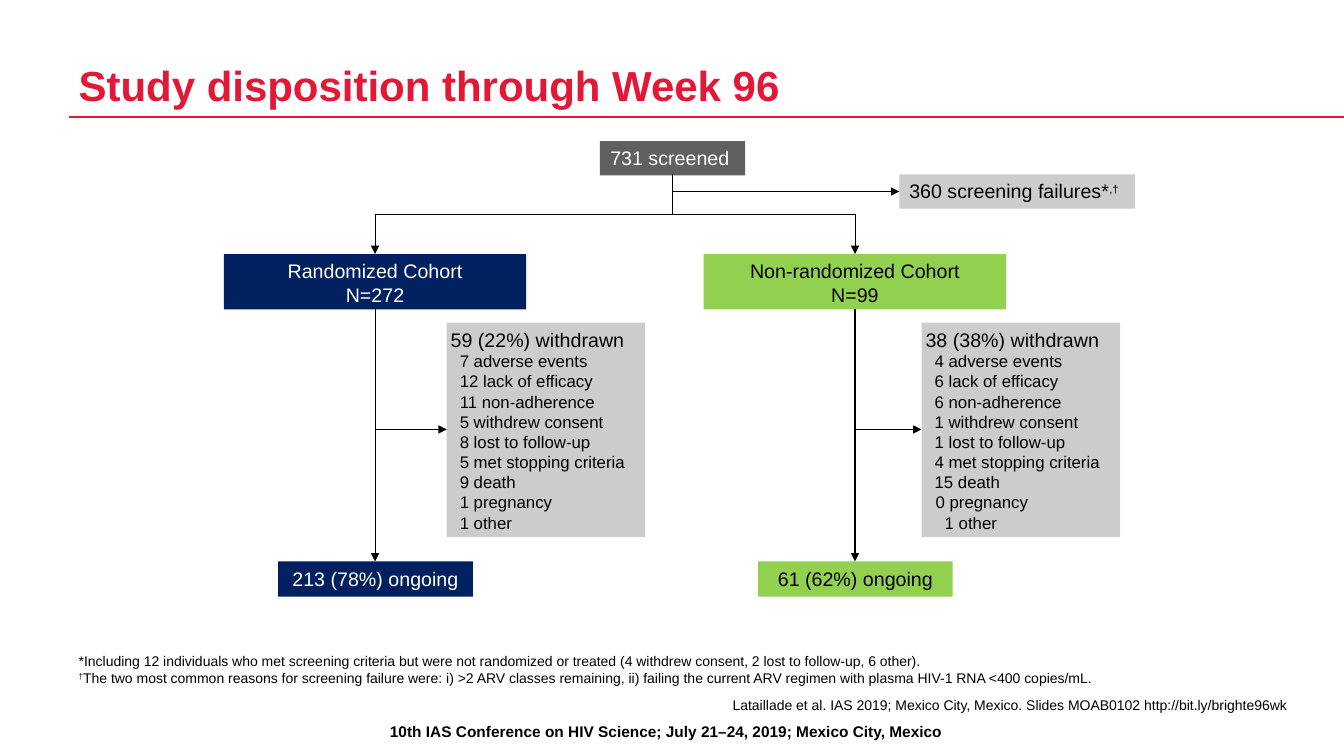
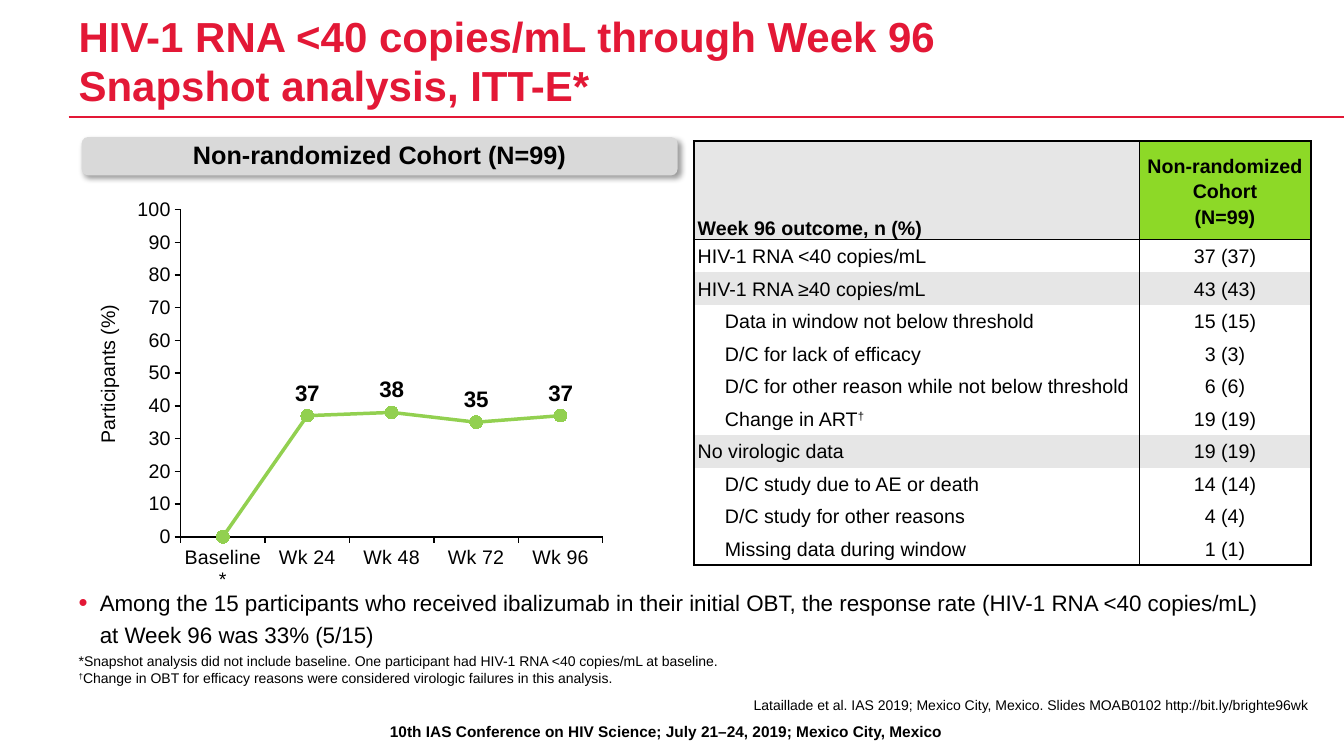
from lxml.etree import SubElement
from pptx import Presentation
from pptx.chart.data import CategoryChartData
from pptx.dml.color import RGBColor
from pptx.enum.chart import XL_CHART_TYPE as ChartType, XL_LABEL_POSITION as LabelPos
from pptx.enum.chart import XL_MARKER_STYLE as Marker, XL_TICK_MARK as Tick
from pptx.enum.shapes import MSO_CONNECTOR as Link, MSO_SHAPE as Shape
from pptx.enum.text import MSO_ANCHOR as Anchor, PP_ALIGN as Align
from pptx.oxml.ns import qn
from pptx.util import Inches, Pt

FONT = "Arial"
BLACK = RGBColor(0x00, 0x00, 0x00)
WHITE = RGBColor(0xFF, 0xFF, 0xFF)
RED = RGBColor(0xE3, 0x18, 0x36)
NAVY = RGBColor(0x00, 0x20, 0x60)
GREEN = RGBColor(0x92, 0xD0, 0x50)
HEADER_GREEN = RGBColor(0x8D, 0xD9, 0x27)
DARK_GREY = RGBColor(0x60, 0x60, 0x60)
MID_GREY = RGBColor(0xCC, 0xCC, 0xCC)
BANNER_GREY = RGBColor(0xD9, 0xD9, 0xD9)
PALE_GREY = RGBColor(0xE6, 0xE6, 0xE6)

FOOTER = "10th IAS Conference on HIV Science; July 21–24, 2019; Mexico City, Mexico"
CITATION = "Lataillade et al. IAS 2019; Mexico City, Mexico. Slides MOAB0102 http://bit.ly/brighte96wk"
NO_INSET = (0, 0, 0, 0)
TIGHT_INSET = (0.04, 0.05, 0.04, 0.05)
REASONS = ["adverse events", "lack of efficacy", "non-adherence", "withdrew consent",
           "lost to follow-up", "met stopping criteria", "death", "pregnancy", "other"]
OUTCOMES = [
    ("HIV-1 RNA <40 copies/mL", "37 (37)", 0),
    ("HIV-1 RNA ≥40 copies/mL", "43 (43)", 0),
    ("Data in window not below threshold", "15 (15)", 0.27),
    ("D/C for lack of efficacy", "3 (3)", 0.27),
    ("D/C for other reason while not below threshold", "6 (6)", 0.27),
    ("Change in ART^†", "19 (19)", 0.27),
    ("No virologic data", "19 (19)", 0),
    ("D/C study due to AE or death", "14 (14)", 0.27),
    ("D/C study for other reasons", "4 (4)", 0.27),
    ("Missing data during window", "1 (1)", 0.27),
]


def add_element(parent, tag, **attributes):
    """Append a child element with the given attributes."""
    return SubElement(parent, qn(tag), {key: str(value) for key, value in attributes.items()})


def write(frame, text, size=14, color=BLACK, bold=False, align=Align.LEFT, line=None,
          indent=0, bullet=None):
    """Add one paragraph to a frame; a caret switches superscript on and off."""
    para = frame.paragraphs[0]
    if para.runs:
        para = frame.add_paragraph()
    props = para._p.get_or_add_pPr()
    props.set("marL", str(Inches(indent)))
    props.set("indent", str(Inches(-indent if bullet else 0)))
    if bullet:
        add_element(add_element(props, "a:buClr"), "a:srgbClr", val=RED)
        add_element(props, "a:buSzPct", val=115000)
        add_element(props, "a:buFont", typeface=FONT)
        add_element(props, "a:buChar", char=bullet)
    para.alignment = align
    if line:
        para.line_spacing = line
    for index, part in enumerate(text.split("^")):
        if part:
            span = para.add_run()
            span.text = part
            span.font.name, span.font.size, span.font.bold = FONT, Pt(size), bold
            span.font.color.rgb = color
            if index % 2:
                span.font._element.set("baseline", "30000")


def set_frame(frame, inset, anchor, wrap=True):
    """Set the margins, anchor and wrapping of a text frame."""
    frame.word_wrap = wrap
    frame.vertical_anchor = anchor
    (frame.margin_left, frame.margin_top,
     frame.margin_right, frame.margin_bottom) = map(Inches, inset)


def add_text(page, box, lines, inset=NO_INSET, anchor=Anchor.BOTTOM, **style):
    """Place a text box holding one paragraph per line."""
    text_box = page.shapes.add_textbox(*map(Inches, box))
    set_frame(text_box.text_frame, inset, anchor)
    for line in lines:
        write(text_box.text_frame, line, **style)
    return text_box


def add_panel(page, box, fill, lines=(), inset=TIGHT_INSET, kind=Shape.RECTANGLE,
              anchor=Anchor.TOP, wrap=True, **style):
    """Place a filled shape holding one paragraph per line."""
    panel = page.shapes.add_shape(kind, *map(Inches, box))
    panel.shadow.inherit = False
    panel.fill.solid()
    panel.fill.fore_color.rgb = fill
    panel.line.fill.background()
    set_frame(panel.text_frame, inset, anchor, wrap)
    for line in lines:
        write(panel.text_frame, line, **style)
    return panel


def add_line(page, start, end, color=BLACK, width=0.75, kind=Link.STRAIGHT, arrow=False):
    """Draw a connector without a shadow."""
    connector = page.shapes.add_connector(kind, *map(Inches, start + end))
    connector.line.color.rgb = color
    connector.line.width = Pt(width)
    if arrow:
        add_element(connector.line._get_or_add_ln(), "a:tailEnd", type="triangle")
    add_element(connector._element.spPr, "a:effectLst")
    return connector


def add_elbow(page, start, end, preset):
    """Draw a bent arrow that leaves its start downwards."""
    (x1, y1), (x2, y2) = start, end
    length, span = y2 - y1, abs(x2 - x1)
    left, top = (x1 + x2 - length) / 2, (y1 + y2 - span) / 2
    connector = add_line(page, (left, top), (left + length, top + span),
                         kind=Link.ELBOW, arrow=True)
    props = connector._element.spPr
    props.find(qn("a:prstGeom")).set("prst", preset)
    frame = props.find(qn("a:xfrm"))
    frame.set("rot", str((270 if x2 > x1 else 90) * 60000))
    if x2 > x1:
        frame.set("flipH", "1")


def add_page(deck, title, notes, citation_right):
    """Add a page with title, rule, footnotes, citation and footer."""
    page = deck.slides.add_slide(deck.slide_layouts[6])
    add_text(page, (0.04, 7.11, 13.14, 0.29), [FOOTER], inset=(0.1, 0.05, 0.1, 0.05),
             anchor=Anchor.TOP, size=11, bold=True, align=Align.CENTER)
    add_line(page, (0.68, 1.16), (13.33, 1.16), RED, 2)
    add_text(page, (0.78, 0.17, 11, 0.92), title, size=30, color=RED, bold=True, line=Pt(35))
    add_text(page, (0.78, 6.41, 12.19, 0.4), notes, size=10)
    add_text(page, (citation_right - 12.19, 6.88, 12.19, 0.2), [CITATION],
             size=10, align=Align.RIGHT)
    return page


def draw_cohort(page, left, top, names, withdrawn, counts, ongoing, fill, color, offset, indents):
    """Draw one cohort column: heading, withdrawals and ongoing participants."""
    center, foot = left + 1.5, top + 0.55
    style = dict(color=color, align=Align.CENTER)
    add_panel(page, (left, top, 3, 0.55), fill, names, **style)
    add_panel(page, (left + 0.54, top + 3.05, 1.93, 0.35), fill, [ongoing], **style)
    panel = add_panel(page, (left + offset, top + 0.68, 1.97, 2.13), MID_GREY, [withdrawn])
    for count, reason in zip(counts, REASONS):
        write(panel.text_frame, f"{count} {reason}", size=12, indent=indents.get(reason, 0.09))
    add_elbow(page, (center, foot), (left + offset, top + 1.74), "bentConnector2")
    add_line(page, (center, foot), (center, top + 3.05), arrow=True)


def draw_flow(page, left, top):
    """Draw the flow from screening to both cohorts."""
    root = (left + 4.45, top + 0.33)
    cohort_top = top + 1.12
    add_panel(page, (left + 3.73, top, 1.44, 0.34), DARK_GREY, ["731 screened"],
              inset=(0.1, 0.05, 0.15, 0.05), color=WHITE, align=Align.CENTER, wrap=False)
    add_panel(page, (left + 6.7, top + 0.33, 2.34, 0.34), MID_GREY,
              ["360 screening failures*^,†"], inset=(0.1, 0.05, 0.1, 0.05))
    add_elbow(page, root, (left + 6.7, top + 0.5), "bentConnector2")
    for shift in (0, 4.76):
        add_elbow(page, root, (left + shift + 1.5, cohort_top), "bentConnector3")
    draw_cohort(page, left, cohort_top, ["Randomized Cohort", "N=272"], "59 (22%) withdrawn",
                [7, 12, 11, 5, 8, 5, 9, 1, 1], "213 (78%) ongoing", NAVY, WHITE, 2.21, {})
    draw_cohort(page, left + 4.76, cohort_top, ["Non-randomized Cohort", "N=99"],
                "38 (38%) withdrawn", [4, 6, 6, 1, 1, 4, 15, 0, 1], "61 (62%) ongoing",
                GREEN, BLACK, 2.16, {"pregnancy": 0.1, "other": 0.19})


def draw_banner(page, box, text):
    """Draw a rounded heading with a soft shadow."""
    banner = add_panel(page, box, BANNER_GREY, [text], inset=(0, 0.05, 0, 0.05),
                       kind=Shape.ROUNDED_RECTANGLE, anchor=Anchor.MIDDLE,
                       size=18, bold=True, align=Align.CENTER, line=0.9)
    effects = banner._element.spPr.find(qn("a:effectLst"))
    shadow = add_element(effects, "a:outerShdw", blurRad=Pt(4), dist=Pt(3),
                         dir=45 * 60000, algn="tl", rotWithShape=0)
    add_element(add_element(shadow, "a:srgbClr", val=BLACK), "a:alpha", val=40000)


def draw_chart(page, left, top):
    """Draw the response line chart and its axis title."""
    data = CategoryChartData()
    data.categories = ["Baseline*", "Wk 24", "Wk 48", "Wk 72", "Wk 96"]
    data.add_series("Series 1", [0, 37, 38, 35, 37])
    box = map(Inches, (left, top, 5.51, 4.45))
    chart = page.shapes.add_chart(ChartType.LINE_MARKERS, *box, data).chart
    chart.has_legend = chart.has_title = False
    chart.font.name, chart.font.size = FONT, Pt(12)
    chart.font.color.rgb = BLACK
    for axis in (chart.category_axis, chart.value_axis):
        axis.has_major_gridlines = False
        axis.major_tick_mark, axis.minor_tick_mark = Tick.OUTSIDE, Tick.NONE
        axis.format.line.color.rgb = BLACK
        axis.format.line.width = Pt(1)
        font = axis.tick_labels.font
        font.name, font.size = FONT, Pt(14)
        font.color.rgb = BLACK
    scale = chart.value_axis
    scale.minimum_scale, scale.maximum_scale, scale.major_unit = 0, 100, 10

    plot = chart.plots[0]
    plot.vary_by_categories = False
    series = plot.series[0]
    series.smooth = False
    series.format.line.color.rgb = GREEN
    series.format.line.width = Pt(2.5)
    series.marker.style, series.marker.size = Marker.CIRCLE, 9
    series.marker.format.fill.solid()
    series.marker.format.fill.fore_color.rgb = GREEN
    series.marker.format.line.color.rgb = GREEN
    labels = series.data_labels
    labels.show_value, labels.position = True, LabelPos.ABOVE
    labels.number_format, labels.number_format_is_linked = "0;;;", False
    labels.font.name, labels.font.size, labels.font.bold = FONT, Pt(16), True
    labels.font.color.rgb = BLACK

    area = chart._chartSpace.chart.plotArea
    for old in area.findall(qn("c:layout")):
        area.remove(old)
    layout = add_element(area, "c:layout")
    area.insert(0, layout)
    manual = add_element(layout, "c:manualLayout")
    for tag, value in (("layoutTarget", "inner"), ("xMode", "edge"), ("yMode", "edge"),
                       ("x", 0.18), ("y", 0.13), ("w", 0.76), ("h", 0.73)):
        add_element(manual, f"c:{tag}", val=value)
    title = add_text(page, (left - 0.53, top + 2.04, 1.59, 0.34), ["Participants (%)"],
                     anchor=Anchor.MIDDLE, align=Align.CENTER)
    title.rotation = 270


def fill_cell(cell, lines, fill, borders, inset, anchor, **style):
    """Write a table cell and set its fill and four border widths."""
    (cell.margin_left, cell.margin_top,
     cell.margin_right, cell.margin_bottom) = map(Inches, inset)
    cell.vertical_anchor = anchor
    for line in lines:
        write(cell.text_frame, line, **style)
    props = cell._tc.get_or_add_tcPr()
    for side, width in zip("LRTB", borders):
        border = add_element(props, f"a:ln{side}", w=Pt(width))
        if width:
            add_element(add_element(border, "a:solidFill"), "a:srgbClr", val=BLACK)
        else:
            add_element(border, "a:noFill")
    if fill:
        cell.fill.solid()
        cell.fill.fore_color.rgb = fill
    else:
        cell.fill.background()


def draw_table(page, left, top):
    """Draw the table of Week 96 outcomes."""
    box = map(Inches, (left, top, 6.12, 4.21))
    table = page.shapes.add_table(len(OUTCOMES) + 1, 2, *box).table
    table.first_row = table.horz_banding = False
    for column, width in zip(table.columns, (4.42, 1.7)):
        column.width = Inches(width)
    for index, row in enumerate(table.rows):
        row.height = Inches((4.21 - 0.98) / len(OUTCOMES) if index else 0.98)
    outer, inner = 1.5, 0.75
    header = dict(bold=True, line=1.15)
    fill_cell(table.cell(0, 0), ["Week 96 outcome, n (%)"], PALE_GREY,
              (outer, inner, outer, inner), (0.04, 0.01, 0.04, 0), Anchor.BOTTOM, **header)
    fill_cell(table.cell(0, 1), ["Non-randomized Cohort", "(N=99)"], HEADER_GREEN,
              (inner, outer, outer, inner), NO_INSET, Anchor.MIDDLE,
              align=Align.CENTER, **header)
    for index, (label, value, indent) in enumerate(OUTCOMES, 1):
        fill = PALE_GREY if index > 1 and not indent else None
        above = inner if index == 1 else 0
        below = outer if index == len(OUTCOMES) else 0
        fill_cell(table.cell(index, 0), [label], fill, (outer, inner, above, below),
                  (0.04, 0.01, 0.04, 0), Anchor.MIDDLE, indent=indent)
        fill_cell(table.cell(index, 1), [value], fill, (inner, outer, above, below),
                  (0.01, 0.01, 0.01, 0), Anchor.MIDDLE, align=Align.CENTER)


def main():
    """Build and save the deck."""
    deck = Presentation()
    deck.slide_width, deck.slide_height = Inches(13.33), Inches(7.5)
    page = add_page(deck, ["Study disposition through Week 96"], [
        "*Including 12 individuals who met screening criteria but were not randomized or treated (4 withdrew consent, 2 lost to follow-up, 6 other).",
        "^†^The two most common reasons for screening failure were: i) >2 ARV classes remaining, ii) failing the current ARV regimen with plasma HIV-1 RNA <400 copies/mL."], 12.76)
    draw_flow(page, 2.22, 1.4)
    page = add_page(deck, ["HIV-1 RNA <40 copies/mL through Week 96", "Snapshot analysis, ITT-E*"], [
        "*Snapshot analysis did not include baseline. One participant had HIV-1 RNA <40 copies/mL at baseline.",
        "^†^Change in OBT for efficacy reasons were considered virologic failures in this analysis."], 12.97)
    draw_chart(page, 0.8, 1.5)
    draw_banner(page, (0.81, 1.36, 5.91, 0.38), "Non-randomized Cohort (N=99)")
    draw_table(page, 6.88, 1.4)
    add_text(page, (0.78, 5.79, 11.8, 0.64), [
        "Among the 15 participants who received ibalizumab in their initial OBT, the response rate (HIV-1 RNA <40 copies/mL) at Week 96 was 33% (5/15)"],
        anchor=Anchor.TOP, size=16, line=1.2, indent=0.21, bullet="•")
    deck.save("out.pptx")


if __name__ == "__main__":
    main()
